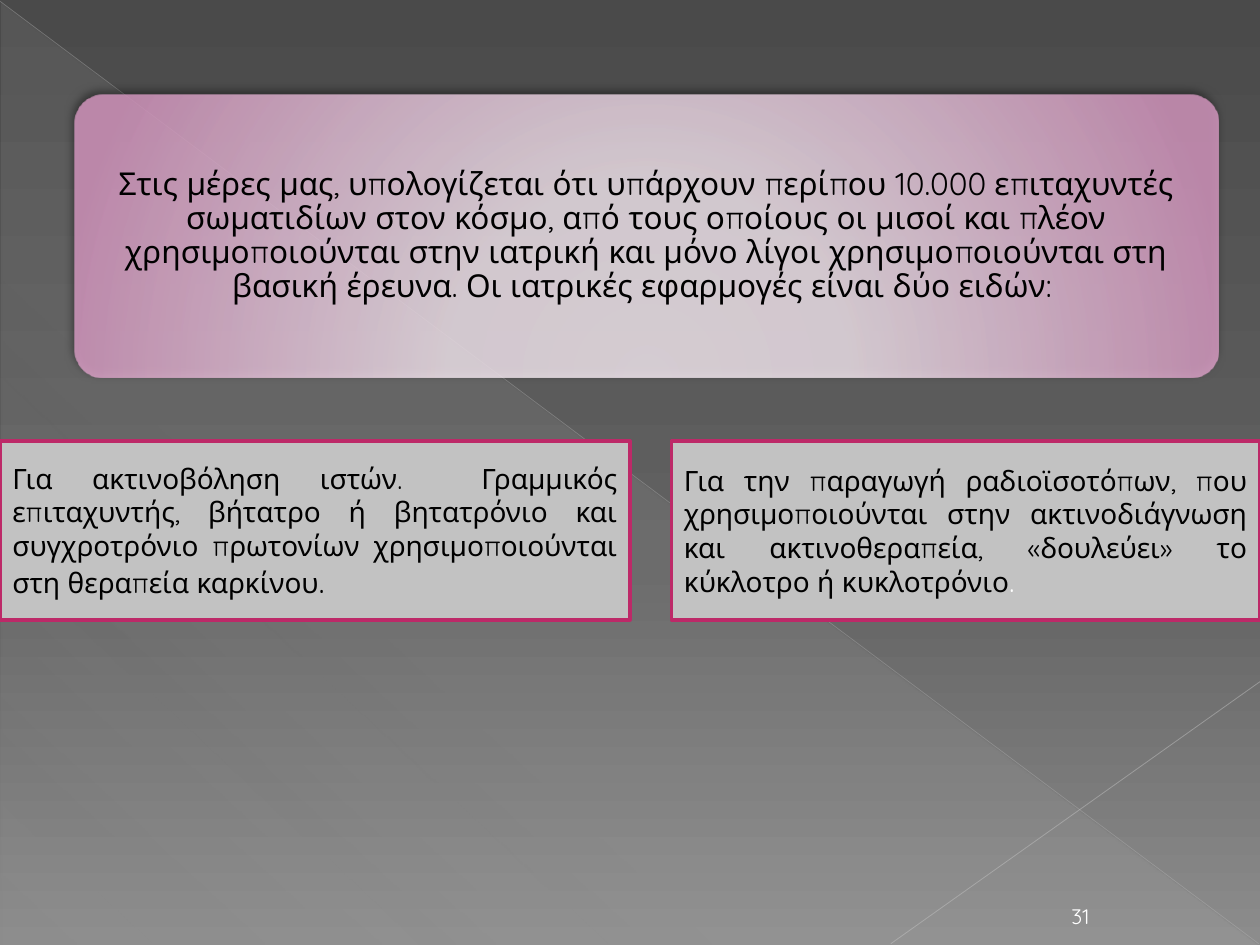
from dataclasses import dataclass

from lxml.etree import SubElement as Sub
from pptx import Presentation
from pptx.dml.color import RGBColor
from pptx.enum.shapes import MSO_CONNECTOR as Conn, MSO_SHAPE as Shape
from pptx.enum.text import MSO_ANCHOR as Anchor, PP_ALIGN as Align
from pptx.oxml.ns import qn
from pptx.util import Inches, Pt


@dataclass(frozen=True)
class Theme:
    font: str = "Quicksand"
    text: str = "000000"
    light: str = "FFFFFF"
    card: str = "C2C2C2"
    accent: str = "BD2968"
    shadow: str = "000000"
    intro_size: int = 18
    card_size: int = 16
    number_size: int = 12
    # Gradient stops: position %, colour, opacity %
    backdrop: tuple = ((0, "4A4A4A", 100), (60, "626262", 100), (100, "8C8C8C", 100))
    sheen: tuple = ((0, "D2D2D2", 10), (70, "D2D2D2", 8), (100, "D2D2D2", 1))
    panel: tuple = ((0, "FBF0F7", 80), (34, "F8ECF4", 80), (100, "DB9BC5", 80))


@dataclass(frozen=True)
class Box:
    left: float
    top: float
    width: float
    height: float

    def emu(self) -> tuple:
        return tuple(Inches(v) for v in (self.left, self.top, self.width, self.height))


@dataclass(frozen=True)
class Ray:
    start: tuple
    end: tuple
    color: str
    weight: float
    opacity: int


@dataclass(frozen=True)
class Card:
    box: Box
    body: str
    ending: str
    ending_format: dict


THEME = Theme()


def add_color(parent, color: str, opacity: int) -> None:
    clr = Sub(parent, qn("a:srgbClr"), val=color)
    if opacity < 100:
        Sub(clr, qn("a:alpha"), val=str(opacity * 1000))


def set_gradient(fill, owner, stops: tuple, angle: int = 90, focus: dict = None) -> None:
    """Replace the fill of owner by a linear gradient, or a circular one around focus."""
    fill.solid()
    solid = owner.find(qn("a:solidFill"))
    grad = Sub(owner, qn("a:gradFill"), rotWithShape="1")
    owner.replace(solid, grad)
    stop_list = Sub(grad, qn("a:gsLst"))
    for position, color, opacity in stops:
        add_color(Sub(stop_list, qn("a:gs"), pos=str(position * 1000)), color, opacity)
    if focus:
        circle = Sub(grad, qn("a:path"), path="circle")
        Sub(circle, qn("a:fillToRect"), {k: str(v * 1000) for k, v in focus.items()})
    else:
        Sub(grad, qn("a:lin"), ang=str(angle * 60000), scaled="0")


def add_shape(s, kind, box: Box):
    sp = s.shapes.add_shape(kind, *box.emu())
    sp.shadow.inherit = False
    sp.line.fill.background()
    return sp


def add_ray(s, ray: Ray) -> None:
    ends = [Inches(v) for v in ray.start + ray.end]
    line = s.shapes.add_connector(Conn.STRAIGHT, *ends)
    line.line.width = Pt(ray.weight)
    line.line.color.rgb = RGBColor.from_string(ray.color)
    sp_pr = line._element.spPr
    clr = sp_pr.find(".//" + qn("a:srgbClr"))
    Sub(clr, qn("a:alpha"), val=str(ray.opacity * 1000))
    Sub(sp_pr, qn("a:effectLst"))


def add_run(p, text: str, *, size: int, color: str = THEME.text) -> None:
    r = p.add_run()
    r.text = text
    r.font.name = THEME.font
    r.font.size = Pt(size)
    r.font.color.rgb = RGBColor.from_string(color)


def write(sp, text: str, *, align=Align.CENTER, anchor=Anchor.MIDDLE,
          inset: float = None, spacing: float = None, **run_format):
    """Fill the first paragraph of a shape and return it."""
    tf = sp.text_frame
    tf.word_wrap = True
    tf.vertical_anchor = anchor
    if inset is not None:
        tf.margin_left = tf.margin_right = tf.margin_top = tf.margin_bottom = Inches(inset)
    p = tf.paragraphs[0]
    p.alignment = align
    if spacing:
        p.line_spacing = spacing
    add_run(p, text, **run_format)
    return p


def add_backdrop(s) -> None:
    fill = s.background.fill
    fill.solid()
    set_gradient(fill, s._element.find(".//" + qn("p:bgPr")), THEME.backdrop)
    sheen = add_shape(s, Shape.RIGHT_TRIANGLE, Box(0.01, 0.02, 9.98, 7.48))
    set_gradient(sheen.fill, sheen._element.spPr, THEME.sheen, angle=133)
    for ray in (Ray((0, 0.01), (9.99, 7.49), "BFBFBF", 0.39, 35),
                Ray((10, 5.41), (7.07, 7.49), "C6C6C6", 0.47, 45)):
        add_ray(s, ray)


def add_intro(s, box: Box, text: str) -> None:
    panel = add_shape(s, Shape.ROUNDED_RECTANGLE, box)
    panel.adjustments[0] = 0.1
    set_gradient(panel.fill, panel._element.spPr, THEME.panel,
                 focus={"l": 50, "t": 155, "r": 50, "b": -55})
    effects = panel._element.spPr.find(qn("a:effectLst"))
    shadow = Sub(effects, qn("a:outerShdw"), blurRad=str(Pt(5)), dist=str(Pt(2)),
                 dir=str(245 * 60000), rotWithShape="0")
    add_color(shadow, THEME.shadow, 50)
    write(s.shapes.add_textbox(*box.emu()), text, inset=0.07, spacing=0.9,
          size=THEME.intro_size)


def add_card(s, card: Card) -> None:
    sp = add_shape(s, Shape.RECTANGLE, card.box)
    sp.fill.solid()
    sp.fill.fore_color.rgb = RGBColor.from_string(THEME.card)
    sp.line.color.rgb = RGBColor.from_string(THEME.accent)
    sp.line.width = Pt(2)
    p = write(sp, card.body, align=Align.JUSTIFY, size=THEME.card_size)
    add_run(p, card.ending, **card.ending_format)


INTRO = (
    "Στις μέρες μας, υπολογίζεται ότι υπάρχουν περίπου 10.000 επιταχυντές σωματιδίων "
    "στον κόσμο, από τους οποίους οι μισοί και πλέον χρησιμοποιούνται στην ιατρική και "
    "μόνο λίγοι χρησιμοποιούνται στη βασική έρευνα. Οι ιατρικές εφαρμογές είναι δύο ειδών: "
)
CARDS = (
    Card(Box(0, 3.5, 5, 1.42),
         "Για ακτινοβόληση ιστών.  Γραμμικός επιταχυντής, βήτατρο ή βητατρόνιο και "
         "συγχροτρόνιο πρωτονίων χρησιμοποιούνται στη θεραπεία καρκίνου",
         ".", {"size": THEME.intro_size}),
    Card(Box(5.33, 3.5, 4.67, 1.42),
         "Για την παραγωγή ραδιοϊσοτόπων, που χρησιμοποιούνται στην ακτινοδιάγνωση και "
         "ακτινοθεραπεία, «δουλεύει» το κύκλοτρο ή κυκλοτρόνιο",
         ". ", {"size": THEME.card_size, "color": THEME.light}),
)


def main() -> None:
    prs = Presentation()
    prs.slide_width, prs.slide_height = Inches(10), Inches(7.5)
    s = prs.slides.add_slide(prs.slide_layouts[6])  # blank: the slide has no title
    add_backdrop(s)

    # Slide number
    number = s.shapes.add_textbox(*Box(8.3, 7.09, 0.55, 0.33).emu())
    write(number, "31", anchor=Anchor.BOTTOM, size=THEME.number_size, color=THEME.light)

    # Introduction and the two kinds of application
    add_intro(s, Box(0.59, 0.75, 9.08, 2.25), INTRO)
    for card in CARDS:
        add_card(s, card)
    prs.save("out.pptx")


if __name__ == "__main__":
    main()
